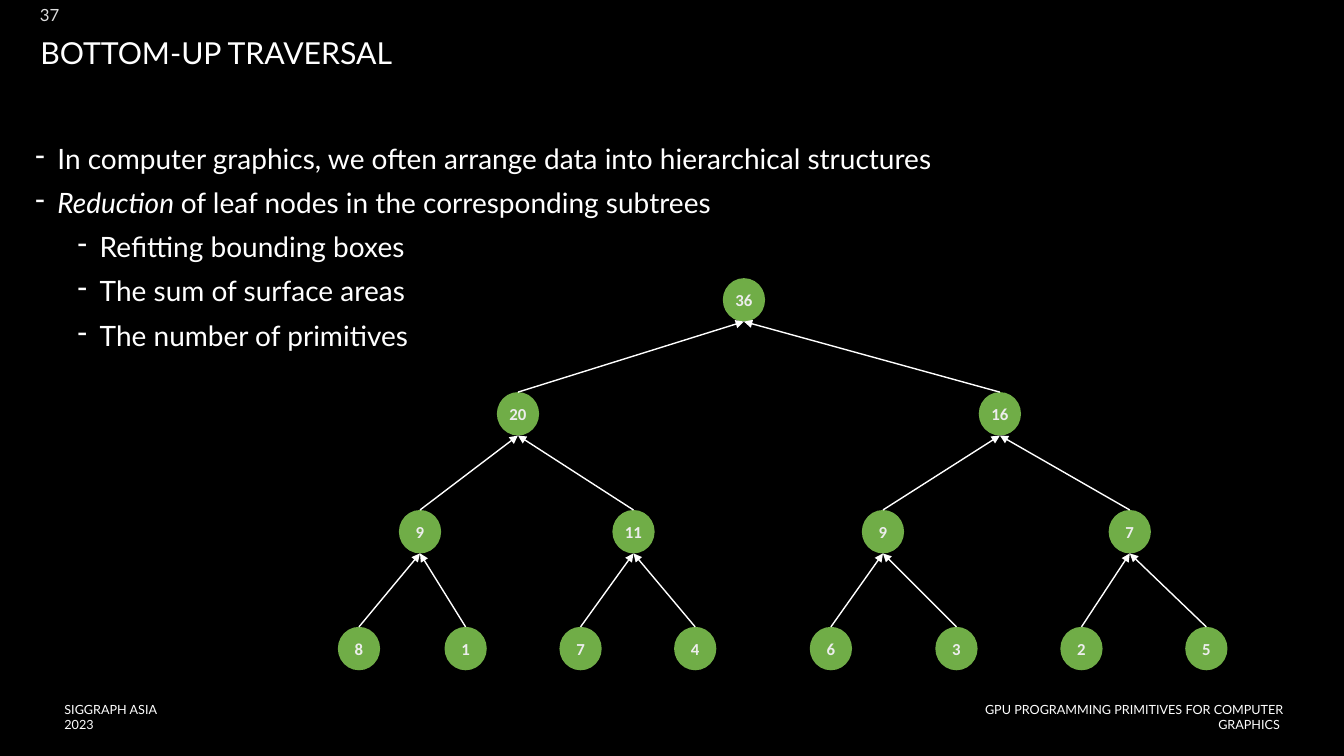
from lxml.etree import SubElement
from pptx import Presentation
from pptx.dml.color import RGBColor
from pptx.enum.shapes import MSO_CONNECTOR as LINE, MSO_SHAPE as SHAPE
from pptx.enum.text import MSO_ANCHOR as ANCHOR, PP_ALIGN as ALIGN
from pptx.oxml.ns import qn
from pptx.util import Pt

WHITE = "FFFFFF"
NODE_W, NODE_H = 30.2, 31

# Each level of the tree: top, then (centre, value) of its nodes
LEVELS = [
    (198.7, [(531.4, 36)]),
    (280.1, [(370, 20), (714.2, 16)]),
    (364.3, [(300, 9), (452.5, 11), (630.7, 9), (807, 7)]),
    (447.8, [(256.4, 8), (332.6, 1), (414.7, 7), (496.6, 4),
             (593.5, 6), (683.2, 3), (772.5, 2), (861.7, 5)]),
]

# Each point: level, then (text, italic) runs
POINTS = [
    (0, [("In computer graphics, we often arrange data into "
          "hierarchical structures", False)]),
    (0, [("Reduction ", True),
         ("of leaf nodes in the corresponding subtrees", False)]),
    (1, [("Refitting bounding boxes", False)]),
    (1, [("The sum of surface areas", False)]),
    (1, [("The number of primitives", False)]),
]


def paint(fmt, color):
    fmt.solid()
    fmt.fore_color.rgb = RGBColor.from_string(color)


def style(run, size, color=WHITE, name="Lato", bold=False, italic=False):
    font = run.font
    font.name, font.size = name, Pt(size)
    font.bold, font.italic = bold, italic
    paint(font.fill, color)


def set_frame(frame, inset, anchor):
    frame.word_wrap = True
    frame.vertical_anchor = anchor
    frame.margin_left = frame.margin_right = Pt(inset)
    frame.margin_top = frame.margin_bottom = Pt(inset)


def add_box(slide, area, inset=0, anchor=ANCHOR.MIDDLE):
    frame = slide.shapes.add_textbox(*map(Pt, area)).text_frame
    set_frame(frame, inset, anchor)
    return frame


def add_label(slide, area, text, size, color=WHITE, align=ALIGN.LEFT, inset=0):
    frame = add_box(slide, area, inset)
    frame.text = text
    para = frame.paragraphs[0]
    para.alignment = align
    para.line_spacing = 0.9 if inset else 1.0
    style(para.runs[0], size, color)


def add_points(slide, area):
    frame = add_box(slide, area, 3.6, ANCHOR.TOP)
    for i, (level, parts) in enumerate(POINTS):
        para = frame.add_paragraph() if i else frame.paragraphs[0]
        props = para._p.get_or_add_pPr()
        props.set("marL", str(Pt(15.8 + 30.2 * level)))
        props.set("indent", str(Pt(-15.8)))
        SubElement(props, qn("a:buChar"), char="-")
        para.level = level
        para.line_spacing = 0.9
        para.space_before = Pt(10 if i else 0)
        for text, italic in parts:
            run = para.add_run()
            run.text = text
            style(run, 20, italic=italic)


def add_node(slide, mid, top, value):
    node = slide.shapes.add_shape(SHAPE.OVAL, Pt(mid - NODE_W / 2), Pt(top),
                                  Pt(NODE_W), Pt(NODE_H))
    node.shadow.inherit = False
    paint(node.fill, "70AD47")
    node.line.fill.background()
    frame = node.text_frame
    set_frame(frame, 3.6, ANCHOR.MIDDLE)
    frame.text = str(value)
    para = frame.paragraphs[0]
    para.alignment = ALIGN.CENTER
    style(para.runs[0], 12, "EDEDED", "Calibri", bold=True)
    return node


def add_arrow(slide, child, parent):
    """Link the top of the child to the bottom of its parent."""
    arrow = slide.shapes.add_connector(
        LINE.STRAIGHT, child.left + child.width // 2, child.top,
        parent.left + parent.width // 2, parent.top + parent.height)
    arrow.begin_connect(child, 0)
    # An oval has eight sites; end_connect handles only the first four
    ends = arrow._element.find(".//" + qn("p:cNvCxnSpPr"))
    SubElement(ends, qn("a:endCxn"), id=str(parent.shape_id), idx="4")
    paint(arrow.line.fill, WHITE)
    arrow.line.width = Pt(1)
    SubElement(arrow.line._get_or_add_ln(), qn("a:tailEnd"), type="triangle")
    SubElement(arrow._element.spPr, qn("a:effectLst"))


def add_tree(slide):
    above = []
    for top, items in LEVELS:
        row = [add_node(slide, mid, top, value) for mid, value in items]
        if above:
            for i, child in enumerate(row):
                add_arrow(slide, child, above[i // 2])
        above = row


def main():
    deck = Presentation()
    deck.slide_width, deck.slide_height = Pt(960), Pt(540)
    slide = deck.slides.add_slide(deck.slide_layouts[6])
    paint(slide.background.fill, "000000")

    add_label(slide, (46, 506.9, 77.8, 10.8), "SIGGRAPH ASIA 2023", 9)
    add_label(slide, (689, 506.9, 227.5, 10.8),
              "GPU PROGRAMMING PRIMITIVES FOR COMPUTER GRAPHICS ", 9,
              align=ALIGN.RIGHT)
    add_label(slide, (28, 3.6, 14.4, 14.4), "37", 12, "DDDDDD", ALIGN.RIGHT)
    add_label(slide, (25.2, 23.8, 914.4, 30.2), "BOTTOM-UP TRAVERSAL", 21.6,
              inset=3.6)
    add_points(slide, (21.6, 100, 918, 160))
    add_tree(slide)
    deck.save("out.pptx")


if __name__ == "__main__":
    main()
